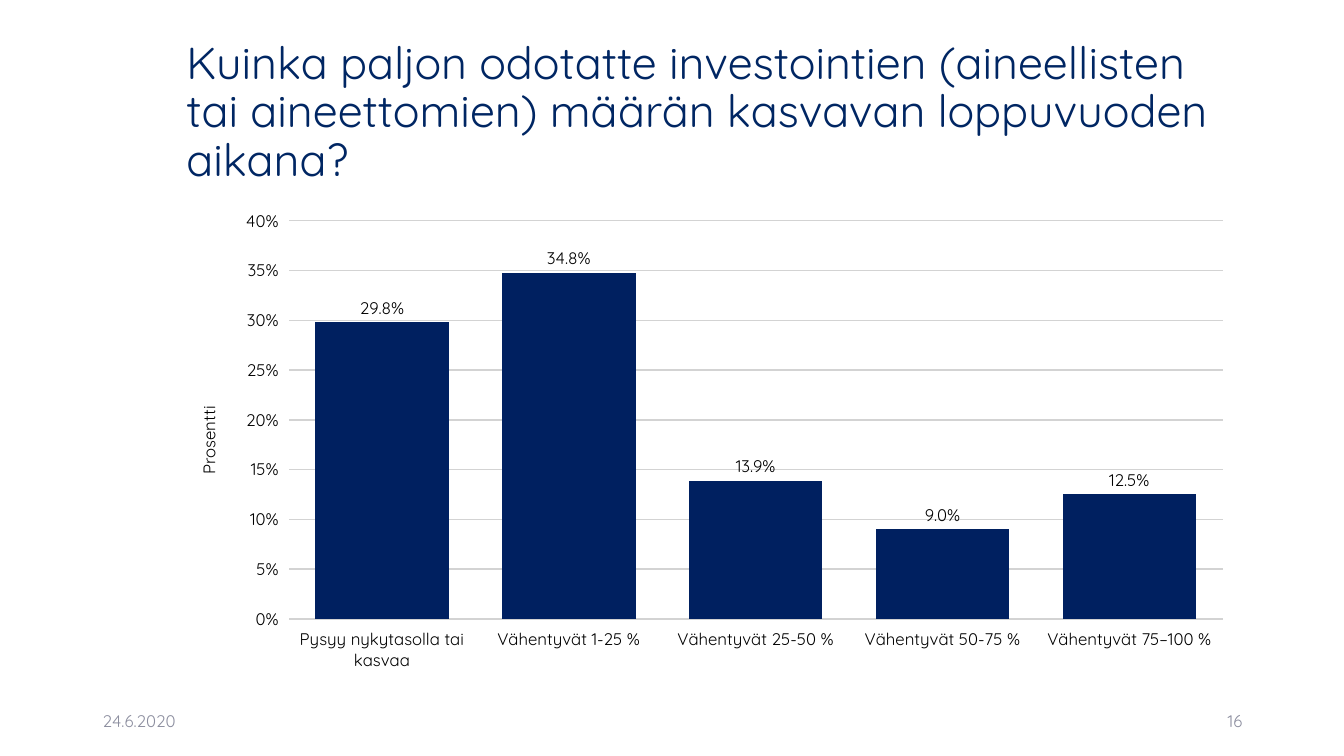
from dataclasses import dataclass

from lxml.etree import SubElement
from pptx import Presentation
from pptx.chart.data import CategoryChartData
from pptx.dml.color import RGBColor
from pptx.enum.chart import XL_CHART_TYPE, XL_LABEL_POSITION, XL_TICK_MARK
from pptx.enum.text import MSO_ANCHOR, PP_ALIGN
from pptx.oxml.ns import qn
from pptx.util import Inches, Pt


@dataclass(frozen=True)
class Theme:
    font: str = "Quicksand"
    title_color: RGBColor = RGBColor(0x00, 0x26, 0x63)
    bar_color: RGBColor = RGBColor(0x00, 0x20, 0x60)
    text_color: RGBColor = RGBColor(0x00, 0x00, 0x00)
    footer_color: RGBColor = RGBColor(0x8C, 0x8E, 0x9F)
    grid_color: RGBColor = RGBColor(0xD3, 0xD3, 0xD3)
    title_size: int = 32
    small_size: int = 12


class SlideBuilder:
    """Places elements by shares of the slide's width and height."""

    def __init__(self, deck, theme):
        self.deck = deck
        self.theme = theme
        self.page = deck.slides.add_slide(deck.slide_layouts[6])

    def area(self, left, top, width, height):
        wide, high = self.deck.slide_width, self.deck.slide_height
        return [int(share * side) for share, side in
                zip((left, top, width, height), (wide, high, wide, high))]

    def style(self, font, size, color):
        font.name = self.theme.font
        font.size = Pt(size)
        font.bold = False
        font.color.rgb = color

    def text(self, words, area, size, color, align=PP_ALIGN.LEFT, spacing=1.0):
        box = self.page.shapes.add_textbox(*self.area(*area))
        frame = box.text_frame
        frame.word_wrap = True
        frame.vertical_anchor = MSO_ANCHOR.MIDDLE
        frame.text = words
        para = frame.paragraphs[0]
        para.alignment = align
        para.line_spacing = spacing
        self.style(para.runs[0].font, size, color)

    def column_chart(self, answers, axis_title, area, plot_area):
        theme = self.theme
        data = CategoryChartData(number_format="0.0%")
        data.categories = list(answers)
        data.add_series("Series 1", list(answers.values()))
        chart = self.page.shapes.add_chart(
            XL_CHART_TYPE.COLUMN_CLUSTERED, *self.area(*area), data).chart
        chart.has_legend = False
        chart.has_title = False
        self.style(chart.font, theme.small_size, theme.text_color)

        # Axes
        for axis in (chart.category_axis, chart.value_axis):
            axis.major_tick_mark = XL_TICK_MARK.OUTSIDE
            axis.format.line.fill.background()
            self.style(axis.tick_labels.font, theme.small_size, theme.text_color)
        values = chart.value_axis
        values.minimum_scale, values.maximum_scale = 0, 0.4
        values.major_unit = 0.05
        values.tick_labels.number_format = "0%"
        values.tick_labels.number_format_is_linked = False
        values.major_gridlines.format.line.color.rgb = theme.grid_color
        values.major_gridlines.format.line.width = Pt(1)
        title_frame = values.axis_title.text_frame
        title_frame.text = axis_title
        self.style(title_frame.paragraphs[0].runs[0].font,
                   theme.small_size, theme.text_color)

        # Bars and their labels
        plot = chart.plots[0]
        plot.gap_width = 40
        plot.vary_by_categories = False
        fill = plot.series[0].format.fill
        fill.solid()
        fill.fore_color.rgb = theme.bar_color
        plot.has_data_labels = True
        labels = plot.data_labels
        labels.show_value = True
        labels.position = XL_LABEL_POSITION.OUTSIDE_END
        labels.number_format = "0.0%"
        labels.number_format_is_linked = False
        self.style(labels.font, theme.small_size, theme.text_color)
        self.place_plot(chart, plot_area)

    def place_plot(self, chart, plot_area):
        plot_element = chart.element.find(".//" + qn("c:plotArea"))
        layout = plot_element.find(qn("c:layout"))
        if layout is None:
            layout = SubElement(plot_element, qn("c:layout"))
            plot_element.insert(0, layout)
        manual = SubElement(layout, qn("c:manualLayout"))
        settings = {"layoutTarget": "inner", "xMode": "edge", "yMode": "edge",
                    **dict(zip("xywh", plot_area))}
        for name, value in settings.items():
            SubElement(manual, qn("c:" + name)).set("val", str(value))


def main():
    deck = Presentation()
    deck.slide_width, deck.slide_height = Inches(13.33), Inches(7.5)
    theme = Theme()
    slide = SlideBuilder(deck, theme)
    left, width = 1.75 / 13.33, 10.59 / 13.33

    # Question
    slide.text("Kuinka paljon odotatte investointien (aineellisten tai "
               "aineettomien) määrän kasvavan loppuvuoden aikana?",
               (left, 0.4 / 7.5, width, 1.45 / 7.5),
               theme.title_size, theme.title_color, spacing=0.9)

    # Answers
    answers = {
        "Pysyy nykytasolla tai kasvaa": 0.298,
        "Vähentyvät 1-25 %": 0.348,
        "Vähentyvät 25-50 %": 0.139,
        "Vähentyvät 50-75 %": 0.09,
        "Vähentyvät 75–100 %": 0.125,
    }
    slide.column_chart(answers, "Prosentti",
                       (left, 2 / 7.5, width, 4.76 / 7.5),
                       plot_area=(0.105, 0.04, 0.875, 0.83))

    # Date and page number
    for words, edge, align in (("24.6.2020", 0.92, PP_ALIGN.LEFT),
                               ("16", 9.42, PP_ALIGN.RIGHT)):
        slide.text(words, (edge / 13.33, 6.95 / 7.5, 3 / 13.33, 0.4 / 7.5),
                   theme.small_size, theme.footer_color, align)

    deck.save("out.pptx")


if __name__ == "__main__":
    main()
